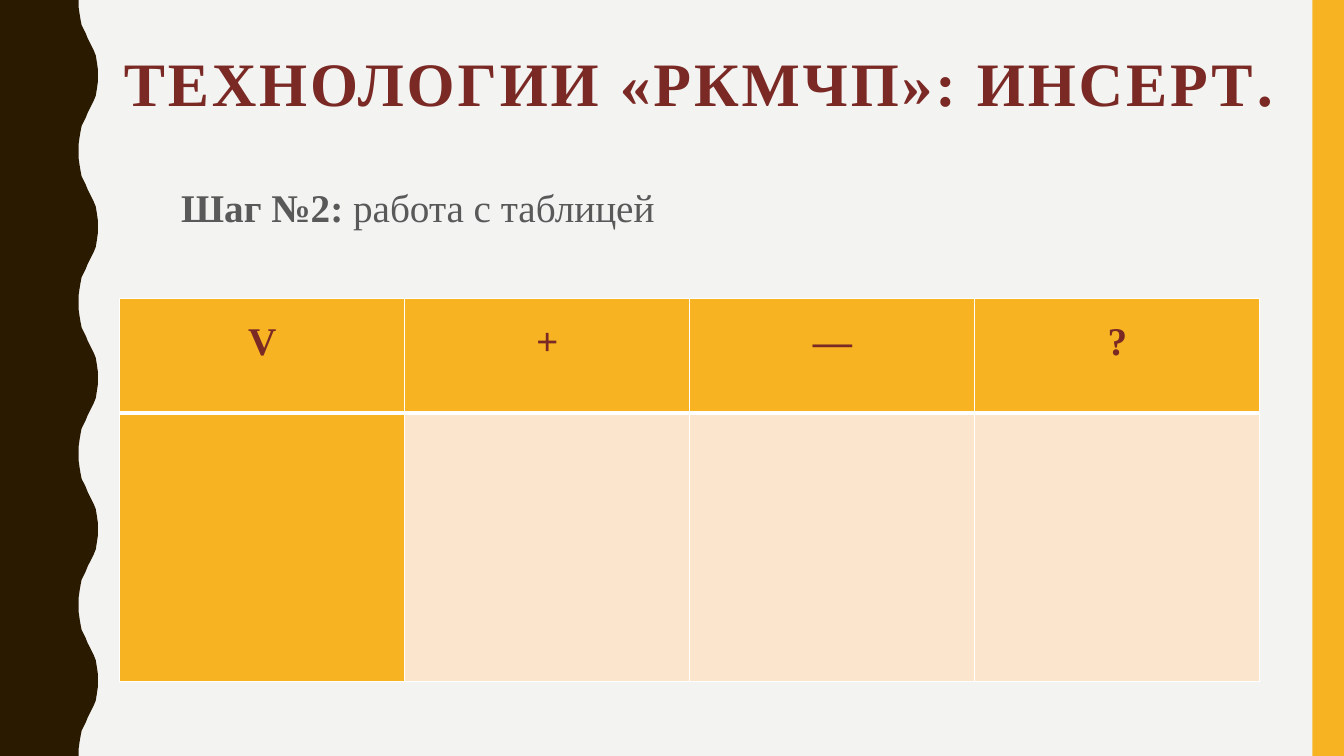
"""Build the slide on the INSERT technique: wavy left edge, title, step line and a four-column table."""
from lxml.etree import SubElement
from pptx import Presentation
from pptx.dml.color import RGBColor
from pptx.enum.shapes import MSO_SHAPE as Shape
from pptx.enum.text import MSO_ANCHOR as Anchor, PP_ALIGN as Align
from pptx.oxml.ns import qn
from pptx.util import Inches, Pt

BROWN, GOLD, PEACH, MAROON, GREY = "2A1A00", "F8B323", "FCE5CD", "7A2924", "595959"
PAPER, WHITE = "F3F3F2", "FFFFFF"


def paint(fill, color):
    """Give a fill one solid colour."""
    fill.solid()
    fill.fore_color.rgb = RGBColor.from_string(color)


def add_run(paragraph, text, color, **formats):
    """Add a Times New Roman run with the given font values."""
    run = paragraph.add_run()
    run.text = text
    for name, value in {"name": "Times New Roman", **formats}.items():
        setattr(run.font, name, value)
    paint(run.font.fill, color)
    return run


presentation = Presentation()
presentation.slide_width, presentation.slide_height = Inches(13.33), Inches(7.5)
column, row = presentation.slide_width / 48, presentation.slide_height / 27
slide = presentation.slides.add_slide(presentation.slide_layouts[6])
paint(slide.background.fill, PAPER)

swell = [(78, 0), (78, 7), (79, 14), (80, 20), (81, 25), (83, 29), (85, 33), (87, 38),
         (89, 42), (91, 46), (93, 50), (95, 55), (96, 61), (97, 68), (97, 75)]
wave_length, wave_count = 150, 5
ebb = [(x, wave_length - y) for x, y in reversed(swell[:-1])]
edge = [(x, y + wave * wave_length) for wave in range(wave_count) for x, y in swell + ebb]
builder = slide.shapes.build_freeform(0, 0, scale=Inches(0.01))
builder.add_line_segments(edge + [(0, wave_count * wave_length)], close=True)
wavy_edge = builder.convert_to_shape()
right_bar = slide.shapes.add_shape(
    Shape.RECTANGLE, int(46.87 * column), 0, int(1.13 * column), presentation.slide_height)
for shape, color in ((wavy_edge, BROWN), (right_bar, GOLD)):
    paint(shape.fill, color)
    shape.line.fill.background()
    shape.shadow.inherit = False

title = slide.shapes.add_textbox(
    int(4.07 * column), int(1.51 * row), int(42.08 * column), int(5.87 * row))
title.text_frame.margin_top = int(0.32 * row)
title_paragraph = title.text_frame.paragraphs[0]
title_paragraph.line_spacing = 0.9
for text, size in (("ТЕХНОЛОГИИ «РКМЧП»: ИНСЕРТ", 44.1), (".", 45.9)):
    title_run = add_run(title_paragraph, text, MAROON, size=Pt(size), bold=True)
    title_run.font._element.set("spc", "200")

header_height, body_height = int(4.1 * row), int(9.58 * row)
headings = ["V", "+", "—", "?"]
table = slide.shapes.add_table(
    2, len(headings), int(4.28 * column), int(10.66 * row),
    int(40.72 * column), header_height + body_height).table
table.rows[0].height, table.rows[1].height = header_height, body_height
table.horz_banding = False
for row_index in range(2):
    for column_index, heading in enumerate(headings):
        cell = table.cell(row_index, column_index)
        properties = cell._tc.get_or_add_tcPr()
        thick_side = ("a:lnT", "a:lnB")[row_index == 0]
        for side in ("a:lnL", "a:lnR", "a:lnT", "a:lnB"):
            border = SubElement(properties, qn(side), w=str(Pt(3 if side == thick_side else 1)))
            SubElement(SubElement(border, qn("a:solidFill")), qn("a:srgbClr"), val=WHITE)
        paint(cell.fill, GOLD if row_index == 0 or column_index == 0 else PEACH)
        if row_index == 0:
            cell.vertical_anchor = Anchor.MIDDLE
            for margin in ("left", "top", "right", "bottom"):
                setattr(cell, f"margin_{margin}", Inches(0.1))
            paragraph = cell.text_frame.paragraphs[0]
            paragraph.alignment, paragraph.line_spacing = Align.CENTER, Pt(12)
            add_run(paragraph, heading, MAROON, size=Pt(28), bold=True)

step = slide.shapes.add_textbox(
    int(6.12 * column), int(6.37 * row), int(18.5 * column), int(2.05 * row))
for text, bold in (("Шаг №2: ", True), ("работа с таблицей", False)):
    add_run(step.text_frame.paragraphs[0], text, GREY, size=Pt(28), bold=bold)

presentation.save("out.pptx")
